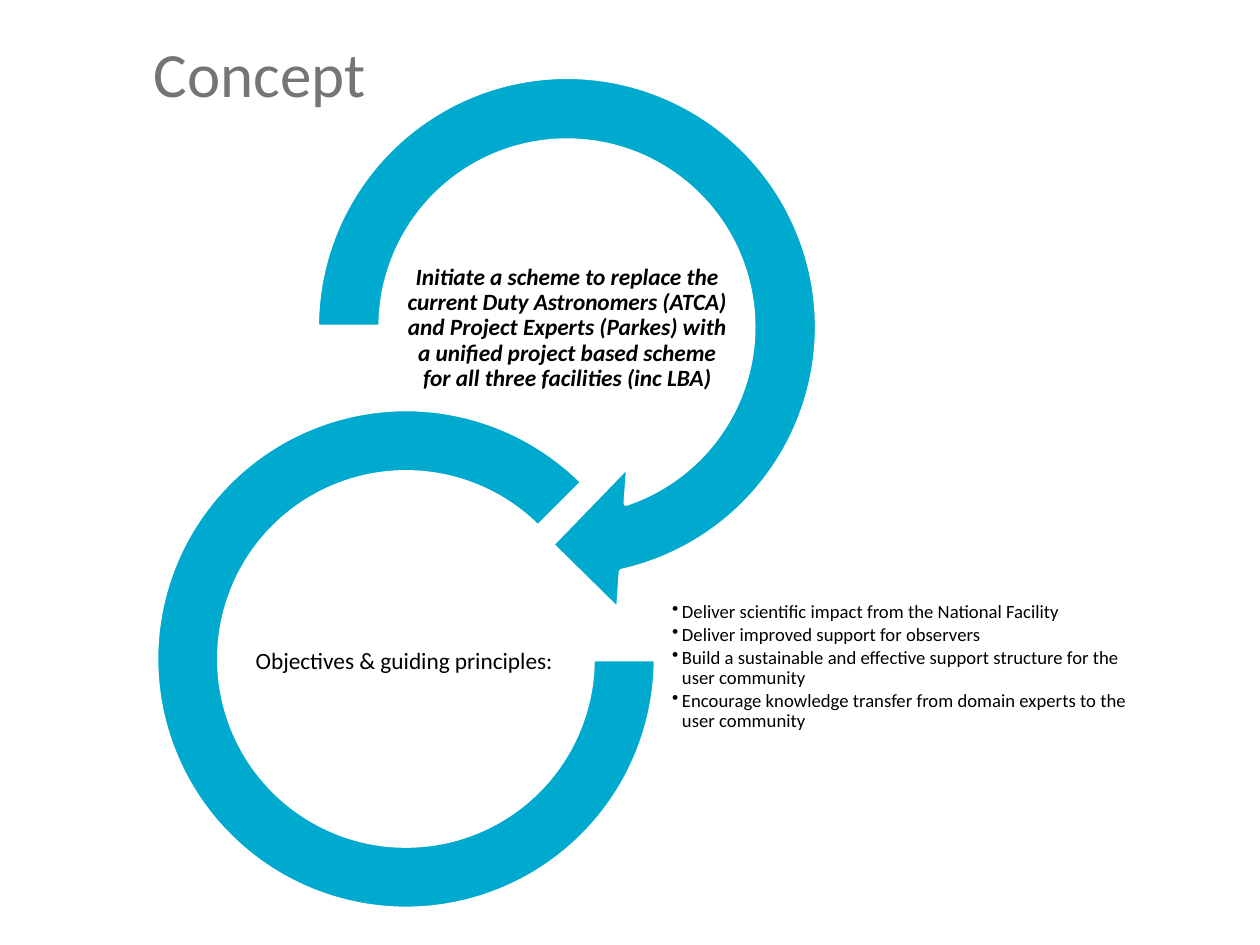
"""Build the Concept slide: two linked rings with objectives."""
import pptx
import pptx.dml.color
import pptx.enum.shapes
import pptx.enum.text
import pptx.oxml
import pptx.oxml.ns
import pptx.util

PX = 914400 / 168
HUES = {"ring": "00A9CE", "edge": "FFFFFF", "text": "000000", "title": "757579"}
KIND = pptx.enum.shapes.MSO_SHAPE
ALIGN = pptx.enum.text.PP_ALIGN
ANCHOR = pptx.enum.text.MSO_ANCHOR


def px(*sizes):
    return [pptx.util.Emu(round(size * PX)) for size in sizes]


def add_text(box, lines, size, hue="text", inset=2, bold=False, bullet=False):
    frame = slide.shapes.add_textbox(*px(*box)).text_frame
    frame.word_wrap = True
    frame.margin_left, frame.margin_top, frame.margin_right, frame.margin_bottom = px(*[inset] * 4)
    frame.vertical_anchor = ANCHOR.MIDDLE if inset else ANCHOR.TOP
    for index, line in enumerate(lines):
        para = frame.add_paragraph() if index else frame.paragraphs[0]
        if inset:
            para.line_spacing = 0.9
            para.alignment = ALIGN.LEFT if bullet else ALIGN.CENTER
        if bullet:
            para.space_after = pptx.util.Pt(1.2)
            props = para._p.get_or_add_pPr()
            indent = px(10)[0]
            props.set("marL", str(indent))
            props.set("indent", str(-indent))
            mark = pptx.oxml.parse_xml(f'<a:buChar {pptx.oxml.ns.nsdecls("a")} char="•"/>')
            props.append(mark)
        run = para.add_run()
        run.text = line
        font = run.font
        font.name = "Calibri"
        font.size = pptx.util.Pt(size)
        font.bold = font.italic = bold
        font.color.rgb = pptx.dml.color.RGBColor.from_string(HUES[hue])


deck = pptx.Presentation()
deck.slide_width, deck.slide_height = px(1260, 945)
slide = deck.slides.add_slide(deck.slide_layouts[6])

rings = [
    (KIND.CIRCULAR_ARROW, (276, 36, 582, 582), (0.11, 11.42, 45, 108, 0.125)),
    (KIND.BLOCK_ARC, (156, 409, 500, 500), (0, 189, 0.127)),
]
for kind, box, turns in rings:
    ring = slide.shapes.add_shape(kind, *px(*box))
    ring.shadow.inherit = False
    ring.fill.solid()
    ring.fill.fore_color.rgb = pptx.dml.color.RGBColor.from_string(HUES["ring"])
    ring.line.color.rgb = pptx.dml.color.RGBColor.from_string(HUES["edge"])
    ring.line.width = pptx.util.Pt(2)
    for index, turn in enumerate(turns):
        ring.adjustments[index] = turn

add_text((154, 35, 1000, 118), ["Concept"], 27, hue="title", inset=0)
scheme = (
    "Initiate a scheme to replace the current Duty Astronomers (ATCA) "
    "and Project Experts (Parkes) with a unified project based scheme "
    "for all three facilities (inc LBA)"
)
add_text((405, 247, 324, 163), [scheme], 10, bold=True)
add_text((242, 581, 324, 163), ["Objectives & guiding principles:"], 10)
goals = [
    "Deliver scientific impact from the National Facility",
    "Deliver improved support for observers",
    "Build a sustainable and effective support structure for the user community",
    "Encourage knowledge transfer from domain experts to the user community",
]
add_text((670, 551, 464, 232), goals, 8, bullet=True)

deck.save("out.pptx")
